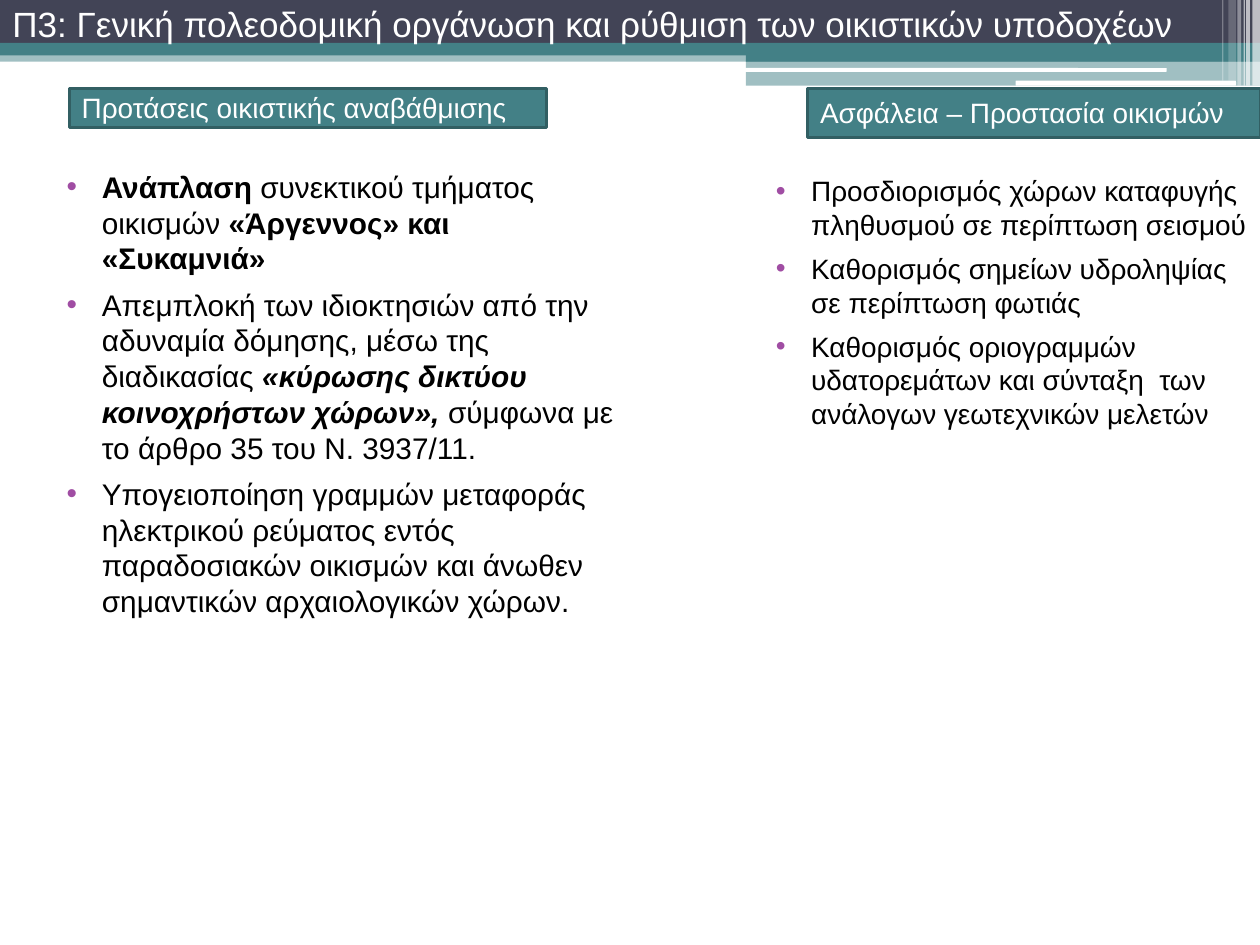
import pptx
import pptx.dml.color
import pptx.enum.shapes
import pptx.enum.text
import pptx.oxml.ns
import pptx.util
from lxml import etree
from pptx.util import Inches

COLORS = {
    "teal": "438086",
    "teal_edge": "325F63",
    "navy": "424456",
    "white": "FFFFFF",
    "black": "000000",
    "bullet": "A04DA3",
}
FONT = "Arial"
SHAPES = pptx.enum.shapes.MSO_SHAPE
ANCHORS = pptx.enum.text.MSO_ANCHOR

# left, top, width, height, colour, opacity in percent
BANDS = [
    (0, 0.4, 10, 0.09, "teal", 50),
    (0, 0, 10, 0.34, "navy", 100),
    (0, 0.34, 10, 0.1, "teal", 100),
    (5.92, 0.39, 4.08, 0.1, "teal", 100),
    (5.92, 0.48, 4.08, 0.2, "teal", 50),
]
ROUNDED_LINES = [(5.91, 0.54, 3.35, 0.03), (8.06, 0.64, 1.75, 0.04)]
# left, width, height, opacity in percent
STRIPES = [
    (9.94, 0.06, 0.68, 65),
    (9.89, 0.03, 0.68, 65),
    (9.87, 0.01, 0.68, 60),
    (9.82, 0.03, 0.68, 40),
    (9.75, 0.06, 0.64, 20),
    (9.7, 0.01, 0.64, 30),
]

# Each paragraph is a list of (text, style); "b" is bold, "i" is italic
UPGRADE_POINTS = [
    [("Ανάπλαση", "b"), (" συνεκτικού τμήματος οικισμών ", ""),
     ("«Άργεννος» και «Συκαμνιά»", "b")],
    [("Απεμπλοκή των ιδιοκτησιών από την αδυναμία δόμησης, μέσω της διαδικασίας ", ""),
     ("«κύρωσης δικτύου κοινοχρήστων χώρων», ", "bi"),
     ("σύμφωνα με το άρθρο 35 του Ν. 3937/11.", "")],
    [("Υπογειοποίηση γραμμών μεταφοράς ηλεκτρικού ρεύματος εντός παραδοσιακών "
      "οικισμών και άνωθεν σημαντικών αρχαιολογικών χώρων.", "")],
]
SAFETY_POINTS = [
    [("Προσδιορισμός χώρων καταφυγής πληθυσμού σε περίπτωση σεισμού", "")],
    [("Καθορισμός σημείων υδροληψίας σε περίπτωση φωτιάς", "")],
    [("Καθορισμός οριογραμμών υδατορεμάτων και σύνταξη  των ανάλογων "
      "γεωτεχνικών μελετών", "")],
]


def rgb(name):
    return pptx.dml.color.RGBColor.from_string(COLORS[name])


def add_block(page, area, color, opacity=100, kind=SHAPES.RECTANGLE, edge=None):
    block = page.shapes.add_shape(kind, *map(Inches, area))
    block.shadow.inherit = False
    block.fill.solid()
    block.fill.fore_color.rgb = rgb(color)
    if opacity < 100:
        fill_color = block.fill._xPr.find(".//" + pptx.oxml.ns.qn("a:srgbClr"))
        etree.SubElement(fill_color, pptx.oxml.ns.qn("a:alpha"), val=str(opacity * 1000))
    if edge:
        block.line.color.rgb = rgb(edge)
        block.line.width = pptx.util.Pt(1.5)
    else:
        block.line.fill.background()
    return block


def add_span(para, text, size=16, color="black", bold=False, italic=False):
    span = para.add_run()
    span.text = text
    span.font.name = FONT
    span.font.size = pptx.util.Pt(size)
    span.font.color.rgb = rgb(color)
    span.font.bold = bold
    span.font.italic = italic


def set_frame(box, anchor):
    frame = box.text_frame
    frame.word_wrap = True
    frame.vertical_anchor = anchor
    return frame


def add_line_of_text(box, text, size):
    para = set_frame(box, ANCHORS.MIDDLE).paragraphs[0]
    para.alignment = pptx.enum.text.PP_ALIGN.LEFT
    add_span(para, text, size=size, color="white")


def set_bullet(para):
    props = para._p.get_or_add_pPr()
    props.set("marL", str(Inches(0.4)))
    props.set("indent", str(Inches(-0.28)))
    color = etree.SubElement(props, pptx.oxml.ns.qn("a:buClr"))
    etree.SubElement(color, pptx.oxml.ns.qn("a:srgbClr"), val=COLORS["bullet"])
    etree.SubElement(props, pptx.oxml.ns.qn("a:buFont"), typeface=FONT)
    etree.SubElement(props, pptx.oxml.ns.qn("a:buChar"), char="•")


def add_bullets(page, area, points, size):
    box = page.shapes.add_textbox(*map(Inches, area))
    frame = set_frame(box, ANCHORS.TOP)
    for index, spans in enumerate(points):
        para = frame.add_paragraph() if index else frame.paragraphs[0]
        para.space_before = pptx.util.Pt(6)
        set_bullet(para)
        for text, style in spans:
            add_span(para, text, size=size, bold="b" in style, italic="i" in style)


def add_heading(page, area, text):
    block = add_block(page, area, "teal", edge="teal_edge")
    add_line_of_text(block, text, size=16)


def add_banner(page):
    for *area, color, opacity in BANDS:
        add_block(page, area, color, opacity)
    for area in ROUNDED_LINES:
        add_block(page, area, "white", kind=SHAPES.ROUNDED_RECTANGLE)
    for left, width, height, opacity in STRIPES:
        add_block(page, (left, 0, width, height), "white", opacity)


def main():
    deck = pptx.Presentation()
    deck.slide_width, deck.slide_height = Inches(10), Inches(7.5)
    page = deck.slides.add_slide(deck.slide_layouts[6])
    add_banner(page)
    add_heading(page, (0.55, 0.7, 3.79, 0.31), "Προτάσεις οικιστικής αναβάθμισης")
    add_bullets(page, (0.31, 1.29, 4.69, 4.92), UPGRADE_POINTS, size=17)
    add_heading(page, (6.41, 0.7, 3.59, 0.39), "Ασφάλεια – Προστασία οικισμών")
    add_bullets(page, (5.94, 1.33, 4.06, 5.78), SAFETY_POINTS, size=16)
    title = page.shapes.add_textbox(0, 0, Inches(9.62), Inches(0.38))
    add_line_of_text(
        title, "Π3: Γενική πολεοδομική οργάνωση και ρύθμιση των οικιστικών υποδοχέων", size=20)
    deck.save("out.pptx")


if __name__ == "__main__":
    main()
